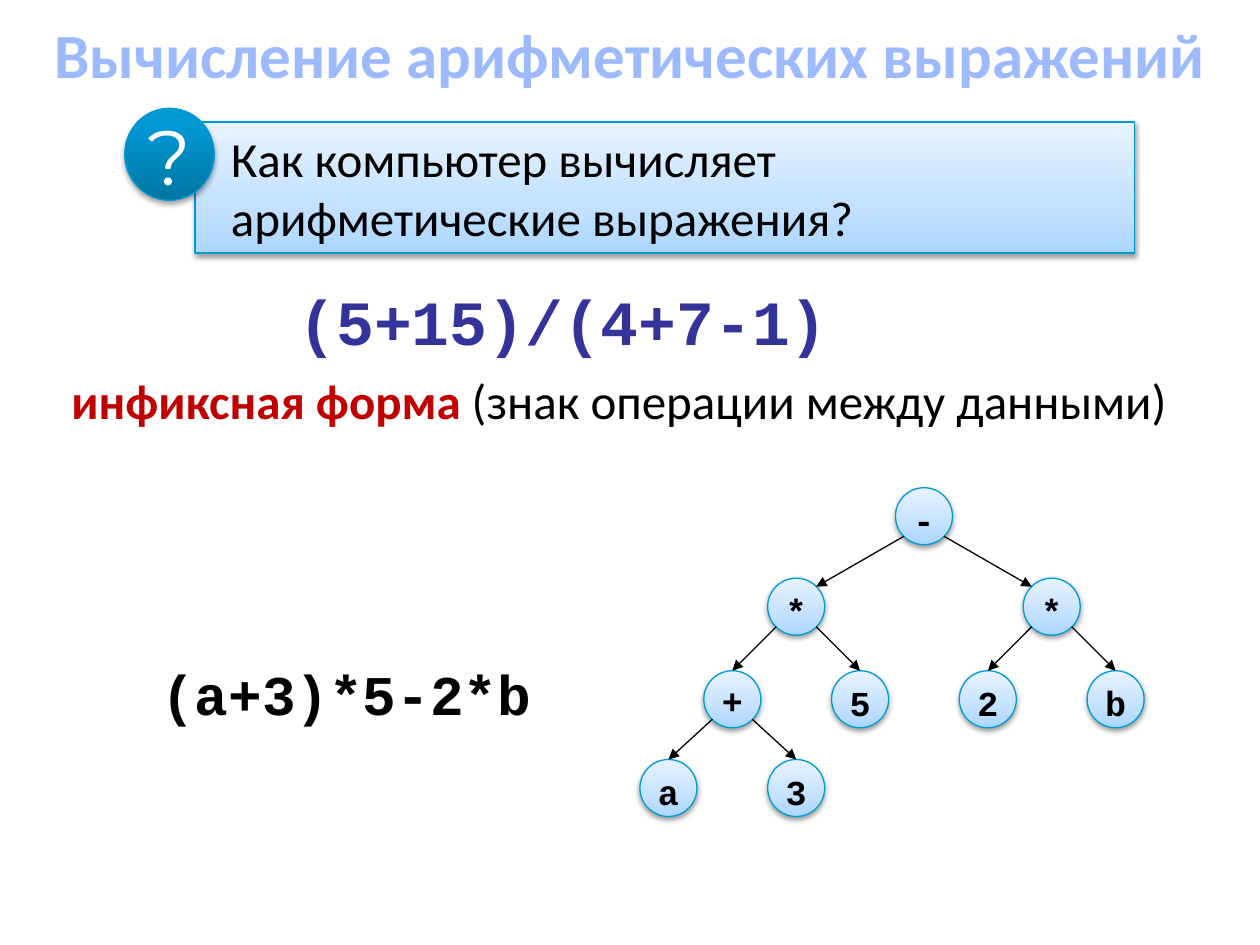
"""Build a slide on evaluating arithmetic expressions, with an expression tree."""
from copy import deepcopy

from lxml import etree
from pptx import Presentation
from pptx.dml.color import RGBColor
from pptx.enum.shapes import MSO_CONNECTOR, MSO_SHAPE
from pptx.enum.text import MSO_ANCHOR, PP_ALIGN
from pptx.oxml.ns import qn
from pptx.util import Pt

RECT, OVAL, ROUND = MSO_SHAPE.RECTANGLE, MSO_SHAPE.OVAL, MSO_SHAPE.ROUNDED_RECTANGLE
STRAIGHT = MSO_CONNECTOR.STRAIGHT
TOP, MIDDLE = MSO_ANCHOR.TOP, MSO_ANCHOR.MIDDLE
LEFT, CENTER = PP_ALIGN.LEFT, PP_ALIGN.CENTER

LIGHT = [(0, "ABD6FF"), (0.35, "C3E1FF"), (1, "E8F3FF")]
DARK = [(0, "0075A2"), (0.8, "0098D2"), (1, "0099D3")]
BORDER = "009AD4"
INSETS = (7.2, 3.6, 7.2, 3.6)

TITLE = dict(name="Calibri", size=36, bold=True, color="9EBAFF")
BODY = dict(name="Calibri", size=28, bold=False, color="000000")
TERM = dict(BODY, bold=True, color="C00000")
MARK = dict(name="Montserrat", size=44, bold=False, color="FFFFFF")
FORMULA = dict(name="Courier New", size=36, bold=True, color="333399")
EXPRESSION = dict(FORMULA, size=32, color="000000")
NODE = dict(EXPRESSION, size=20)

TEXTS = [
    ((0, 0, 720, 61.2), [("Вычисление арифметических выражений", TITLE)], CENTER, MIDDLE),
    ((163.5, 157.7, 342, 51), [("(5+15)/(4+7-1)", FORMULA)], LEFT, TOP),
    ((33.8, 208.1, 669.6, 41), [("инфиксная форма ", TERM),
                               ("(знак операции между данными)", BODY)], LEFT, TOP),
]
QUESTION = "Как компьютер вычисляет арифметические выражения?"

TREE = [
    ("-", 4, 0, None), ("*", 2, 1, 0), ("*", 6, 1, 0),
    ("+", 1, 2, 1), ("5", 3, 2, 1), ("2", 5, 2, 2), ("b", 7, 2, 2),
    ("a", 0, 3, 3), ("3", 2, 3, 3),
]
TREE_LEFT, COLUMN_STEP = 382, 36.5
ROW_CENTERS = [295, 346.7, 399.6, 450.3]
DIAMETER, DIAGONAL = 32.6, 11.4


def rgb(value):
    """Return a colour from a hex string."""
    return RGBColor.from_string(value)


def write(sp, runs, align, anchor, insets=INSETS, wrap=True):
    """Fill the text frame of a shape with one paragraph of formatted runs."""
    tf = sp.text_frame
    sides = ("margin_left", "margin_top", "margin_right", "margin_bottom")
    values = dict(zip(sides, map(Pt, insets)), vertical_anchor=anchor, word_wrap=wrap)
    for key, value in values.items():
        setattr(tf, key, value)
    p = tf.paragraphs[0]
    p.alignment = align
    for text, style in runs:
        r = p.add_run()
        r.text = text
        font = dict(style, size=Pt(style["size"]))
        r.font.color.rgb = rgb(font.pop("color"))
        for key, value in font.items():
            setattr(r.font, key, value)
    return p


def add_glossy(slide, kind, box, stops, alpha=38, dist=1.6):
    """Add a bordered shape with a vertical gradient and a soft shadow."""
    sp = slide.shapes.add_shape(kind, *map(Pt, box))
    sp.fill.gradient()
    sp.fill.gradient_angle = 90
    gs_list = sp._element.spPr.find(".//" + qn("a:gsLst"))
    gs_list.append(deepcopy(gs_list[0]))
    for stop, (position, color) in zip(sp.fill.gradient_stops, stops):
        stop.position = position
        stop.color.rgb = rgb(color)
    sp.line.color.rgb = rgb(BORDER)
    sp.line.width = Pt(0.75)
    sp.shadow.inherit = False
    effects = sp._element.spPr.find(qn("a:effectLst"))
    shadow = etree.SubElement(effects, qn("a:outerShdw"), blurRad=str(Pt(3.1)),
                              dist=str(Pt(dist)), dir="5400000", rotWithShape="0")
    color = etree.SubElement(shadow, qn("a:srgbClr"), val="000000")
    etree.SubElement(color, qn("a:alpha"), val=str(alpha * 1000))
    return sp


def add_arrow(slide, start, end):
    """Add a thin black arrow between two points."""
    cn = slide.shapes.add_connector(STRAIGHT, *map(Pt, start + end))
    cn.line.color.rgb = rgb("000000")
    cn.line.width = Pt(0.75)
    etree.SubElement(cn.line._get_or_add_ln(), qn("a:tailEnd"), type="triangle")
    etree.SubElement(cn._element.spPr, qn("a:effectLst"))


def add_tree(slide):
    """Draw the nodes on their grid, then the arrows from parent to child."""
    centers = [(TREE_LEFT + COLUMN_STEP * col, ROW_CENTERS[row]) for _, col, row, _ in TREE]
    radius = DIAMETER / 2
    for (label, *_), (x, y) in zip(TREE, centers):
        sp = add_glossy(slide, OVAL, (x - radius, y - radius, DIAMETER, DIAMETER), LIGHT)
        top = 0 if label == "+" else 1.44
        write(sp, [(label, NODE)], CENTER, TOP, (0, top, 0, 0))
    for (_, _, row, parent), (x, y) in zip(TREE, centers):
        if parent is None:
            continue
        px, py = centers[parent]
        side = DIAGONAL if x > px else -DIAGONAL
        end = (x - side, y - DIAGONAL) if row == 1 else (x, y - radius)
        add_arrow(slide, (px + side, py + DIAGONAL), end)


def main():
    """Create and save the slide."""
    prs = Presentation()
    prs.slide_width, prs.slide_height = Pt(720), Pt(540)
    slide = prs.slides.add_slide(prs.slide_layouts[6])
    for box, runs, align, anchor in TEXTS:
        write(slide.shapes.add_textbox(*map(Pt, box)), runs, align, anchor)

    sp = add_glossy(slide, RECT, (111.4, 69.8, 537.1, 74.9), LIGHT)
    p = write(sp, [(QUESTION, BODY)], LEFT, TOP)
    p._p.get_or_add_pPr().set("marL", str(Pt(13.5)))
    sp = add_glossy(slide, OVAL, (71.3, 61.9, 51.1, 52.6), DARK, 35, 1.8)
    write(sp, [("?", MARK)], CENTER, MIDDLE, wrap=False)

    add_tree(slide)
    sp = slide.shapes.add_shape(ROUND, *map(Pt, (90, 374.4, 233.3, 46.1)))
    sp.shadow.inherit = False
    sp.fill.solid()
    sp.fill.fore_color.rgb = rgb("FFFFFF")
    sp.line.fill.background()
    write(sp, [("(a+3)*5-2*b", EXPRESSION)], LEFT, TOP, (0, 0, 0, 3.6))
    prs.save("out.pptx")


if __name__ == "__main__":
    main()
